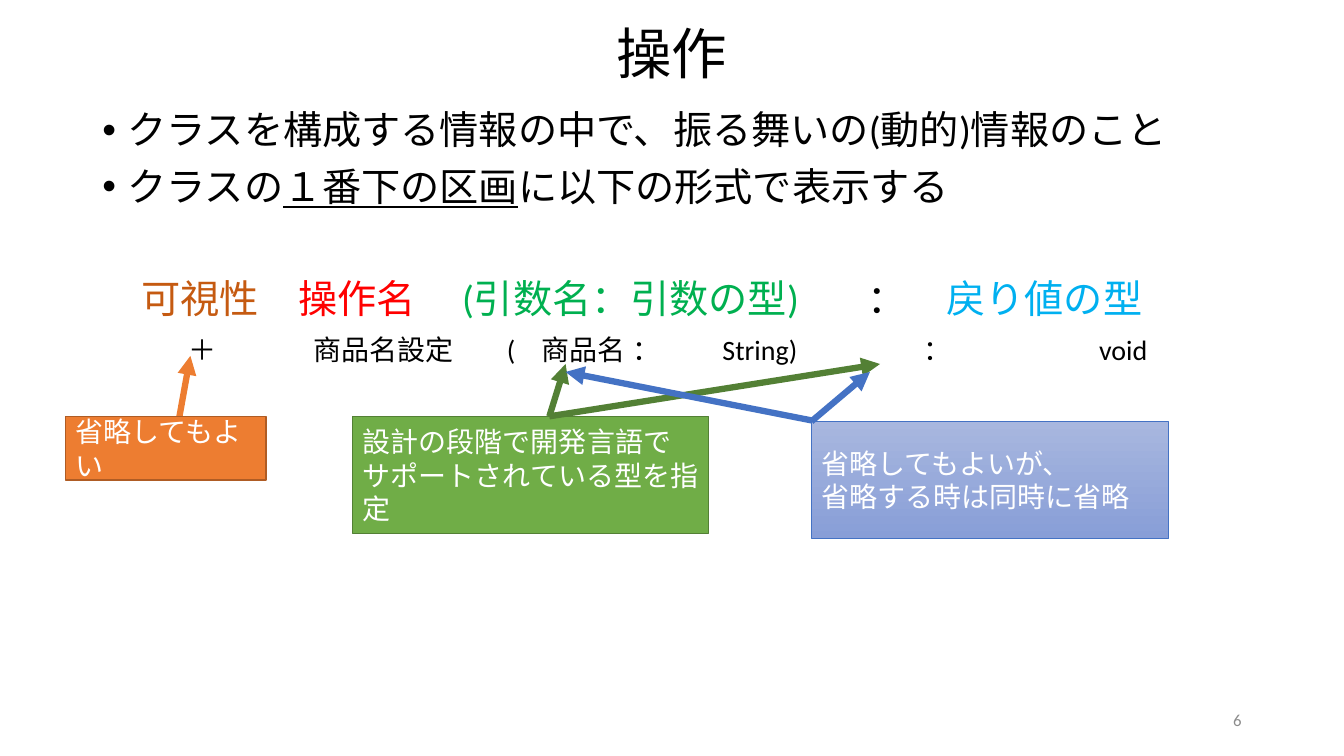
import pptx
import pptx.util
import pptx.dml.color
import pptx.enum.dml
import pptx.enum.shapes
import pptx.enum.text
import pptx.oxml.ns
from lxml import etree

Pt = pptx.util.Pt
RGBColor = pptx.dml.color.RGBColor
Align = pptx.enum.text.PP_ALIGN
Anchor = pptx.enum.text.MSO_ANCHOR

BLACK = RGBColor(0x00, 0x00, 0x00)
WHITE = RGBColor(0xFF, 0xFF, 0xFF)
GRAY = RGBColor(0x8C, 0x8C, 0x8C)
BROWN = RGBColor(0xC5, 0x5A, 0x11)
RED = RGBColor(0xFF, 0x00, 0x00)
GREEN = RGBColor(0x00, 0xB0, 0x50)
SKY = RGBColor(0x00, 0xB0, 0xF0)
ORANGE = RGBColor(0xED, 0x7D, 0x31)
DARK_ORANGE = RGBColor(0xAF, 0x5C, 0x24)
LEAF = RGBColor(0x70, 0xAD, 0x47)
DARK_LEAF = RGBColor(0x53, 0x80, 0x35)
BLUE = RGBColor(0x44, 0x72, 0xC4)
PALE_BLUE = RGBColor(0xA8, 0xB7, 0xDF)
SOFT_BLUE = RGBColor(0x88, 0x9E, 0xD7)


class SlideBuilder:
    """Draws styled text, callouts and arrows on one slide."""

    font_name = "Calibri"
    indent = 18

    def __init__(self, presentation):
        self.slide = presentation.slides.add_slide(presentation.slide_layouts[6])

    def add_child(self, parent, tag, **attributes):
        child = etree.SubElement(parent, pptx.oxml.ns.qn(tag))
        for name, value in attributes.items():
            child.set(name, str(value))
        return child

    def format_run(self, run, size, color):
        run.font.name = self.font_name
        run.font.size = Pt(size)
        run.font.color.rgb = color

    def text_box(self, left, top, width, height, anchor=Anchor.TOP):
        text_frame = self.slide.shapes.add_textbox(
            Pt(left), Pt(top), Pt(width), Pt(height)).text_frame
        text_frame.word_wrap = True
        text_frame.vertical_anchor = anchor
        return text_frame

    def label(self, box, text, size, color, alignment):
        text_frame = self.text_box(*box, anchor=Anchor.MIDDLE)
        text_frame.text = text
        paragraph = text_frame.paragraphs[0]
        paragraph.alignment = alignment
        paragraph.line_spacing = 0.9
        self.format_run(paragraph.runs[0], size, color)

    def rich_paragraph(self, paragraph, parts, size, tabs=(), bullet=False):
        paragraph.line_spacing = 0.9
        paragraph.space_before = Pt(10)
        properties = paragraph._p.get_or_add_pPr()
        if bullet:
            properties.set("marL", str(Pt(self.indent)))
            properties.set("indent", str(-Pt(self.indent)))
            self.add_child(properties, "a:buFont", typeface="Arial")
            self.add_child(properties, "a:buChar", char="•")
        if tabs:
            tab_list = self.add_child(properties, "a:tabLst")
            for position in tabs:
                self.add_child(tab_list, "a:tab", pos=Pt(position), algn="l")
        for text, color, underline in parts:
            run = paragraph.add_run()
            run.text = text
            self.format_run(run, size, color)
            run.font.underline = underline

    def callout(self, box, lines, colors, line, line_width):
        shape = self.slide.shapes.add_shape(
            pptx.enum.shapes.MSO_SHAPE.RECTANGLE, *(Pt(length) for length in box))
        shape.shadow.inherit = False
        if len(colors) > 1:
            shape.fill.gradient()
            shape.fill.gradient_angle = 270
            for stop, color in zip(shape.fill.gradient_stops, colors):
                stop.color.rgb = color
        else:
            shape.fill.solid()
            shape.fill.fore_color.rgb = colors[0]
        shape.line.color.rgb = line
        shape.line.width = Pt(line_width)
        text_frame = shape.text_frame
        text_frame.word_wrap = True
        text_frame.vertical_anchor = Anchor.MIDDLE
        text_frame.text = "\n".join(lines)
        for paragraph in text_frame.paragraphs:
            paragraph.alignment = Align.LEFT
            self.format_run(paragraph.runs[0], 20, WHITE)

    def arrow(self, start, end, color):
        connector = self.slide.shapes.add_connector(
            pptx.enum.shapes.MSO_CONNECTOR.STRAIGHT,
            *(Pt(length) for length in start + end))
        connector.line.color.rgb = color
        connector.line.width = Pt(4.5)
        self.add_child(connector.line._get_or_add_ln(), "a:tailEnd", type="triangle")
        self.add_child(connector._element.spPr, "a:effectLst")


def main():
    presentation = pptx.Presentation()
    presentation.slide_width = Pt(960)
    presentation.slide_height = Pt(540)
    builder = SlideBuilder(presentation)

    builder.label((66, 16, 828, 49), "操作", 39.6, BLACK, Align.CENTER)

    bullets = builder.text_box(66, 75.6, 828, 90)
    builder.rich_paragraph(
        bullets.paragraphs[0],
        [("クラスを構成する情報の中で、振る舞いの(動的)情報のこと", BLACK, False)],
        28, bullet=True)
    builder.rich_paragraph(
        bullets.add_paragraph(),
        [("クラスの", BLACK, False), ("１番下の区画", BLACK, True),
         ("に以下の形式で表示する", BLACK, False)],
        28, bullet=True)

    notation = builder.text_box(66, 196.4, 828, 80)
    builder.rich_paragraph(
        notation.paragraphs[0],
        [("\t可視性", BROWN, False), ("\t操作名", RED, False),
         ("\t(引数名：引数の型)", GREEN, False), ("\t：", BLACK, False),
         ("\t戻り値の型", SKY, False)],
        28, tabs=(28, 140, 257, 546.5, 603))
    builder.rich_paragraph(
        notation.add_paragraph(),
        [("\t＋\t商品名設定\t(\t商品名\t：\tString)\t：\tvoid", BLACK, False)],
        20, tabs=(61.5, 151, 289, 314, 378.5, 443, 586.5, 712))

    argument = (404, 260)
    argument_blue = (404, 265.7)
    type_note = (392.4, 297.4)

    builder.label((678, 500.4, 216, 28.8), "6", 12, GRAY, Align.RIGHT)
    builder.arrow((128.2, 297.4), (136, 254.2), ORANGE)
    builder.callout((46.8, 297.4, 143.3, 45.4), ["省略してもよい"],
                    [ORANGE], DARK_ORANGE, 1)
    builder.arrow(type_note, argument, DARK_LEAF)
    builder.callout((252, 297.4, 254.2, 83.5),
                    ["設計の段階で開発言語で サポートされている型を指定"],
                    [LEAF], DARK_LEAF, 1)
    builder.arrow(type_note, (628.6, 260), DARK_LEAF)
    builder.arrow((583.2, 301), argument_blue, BLUE)
    builder.callout((579.6, 301, 254.9, 83.5),
                    ["省略してもよいが、", "省略する時は同時に省略"],
                    [PALE_BLUE, SOFT_BLUE], BLUE, 0.5)
    builder.arrow((579.6, 301), (621.4, 265.7), BLUE)

    presentation.save("out.pptx")


if __name__ == "__main__":
    main()
